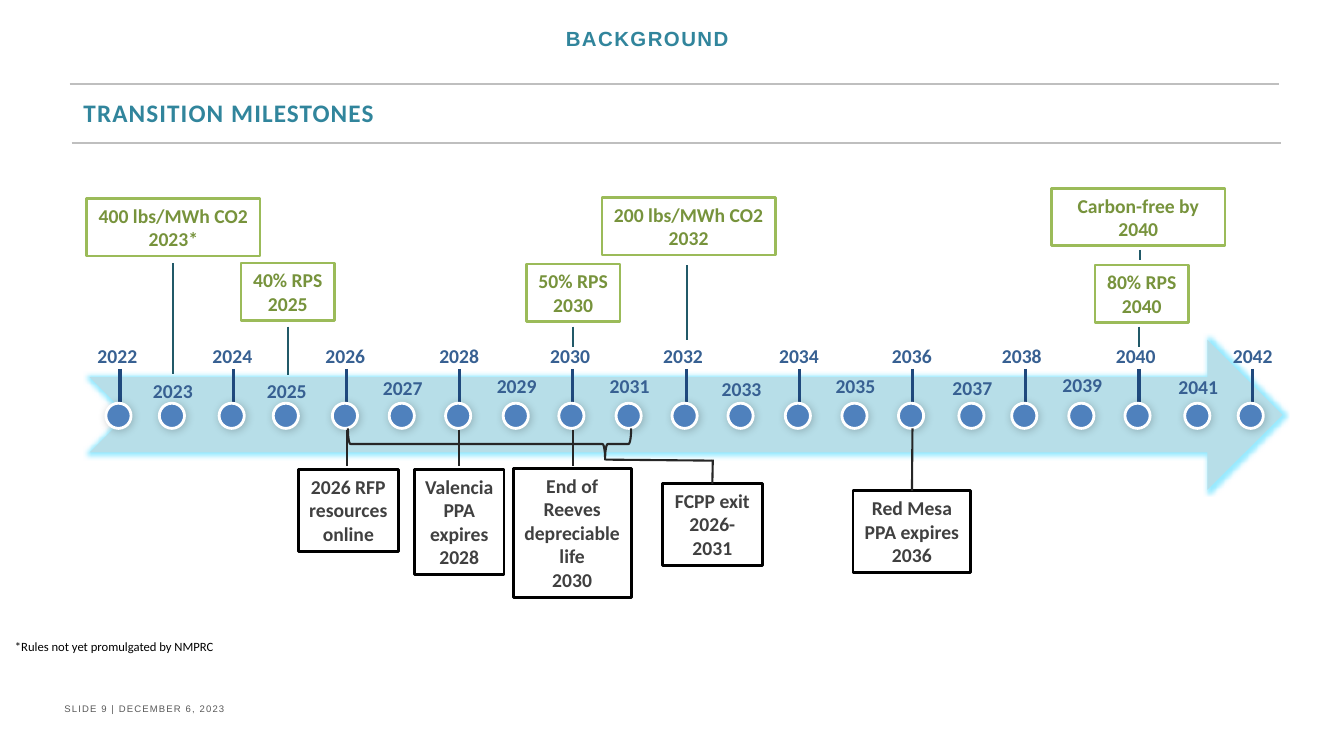
from lxml import etree
from pptx import Presentation
from pptx.dml.color import RGBColor
from pptx.enum.shapes import MSO_CONNECTOR, MSO_SHAPE
from pptx.enum.text import MSO_ANCHOR, MSO_AUTO_SIZE, PP_ALIGN
from pptx.oxml.ns import qn
from pptx.util import Inches, Pt

STRAIGHT = MSO_CONNECTOR.STRAIGHT
RECT, OVAL = MSO_SHAPE.RECTANGLE, MSO_SHAPE.OVAL
ARROW, BRACE = MSO_SHAPE.NOTCHED_RIGHT_ARROW, MSO_SHAPE.RIGHT_BRACE
TOP, MIDDLE = MSO_ANCHOR.TOP, MSO_ANCHOR.MIDDLE
LEFT, CENTER = PP_ALIGN.LEFT, PP_ALIGN.CENTER
GROW, FIXED = MSO_AUTO_SIZE.SHAPE_TO_FIT_TEXT, MSO_AUTO_SIZE.NONE
TOP_SIDE = 0

# Content: headings as (text, box, format, letter spacing, anchor, alignment)
TEAL = "31859C"
HEADINGS = [
    ("BACKGROUND", (2.7, 0.15, 7.44, 0.47),
     dict(size=14.6, name="Arial", color=TEAL, bold=True), 1, MIDDLE, CENTER),
    ("TRANSITION MILESTONES", (0.73, 0.83, 12.14, 0.58),
     dict(size=18, name="Calibri", color=TEAL, bold=True), 0.8, MIDDLE, LEFT),
    ("*Rules not yet promulgated by NMPRC", (0.05, 6.29, 4.26, 0.25),
     dict(size=9, name="Calibri", color="000000", bold=False), 0, TOP, LEFT),
    ("SLIDE 9 | DECEMBER 6, 2023", (0.54, 6.92, 3.57, 0.21),
     dict(size=6.8, name="Arial", color="595959", bold=False), 0.8, TOP, LEFT),
]
RULES = [(0.69, 0.83), (0.71, 1.42)]
RULE_WIDTH = 12

# Even years: label left; odd years: dot left and label top
EVEN_YEARS = {2022: 0.73, 2024: 1.87, 2026: 2.99, 2028: 4.12, 2030: 5.22, 2032: 6.34,
              2034: 7.49, 2036: 8.61, 2038: 9.7, 2040: 10.83, 2042: 11.99}
ODD_YEARS = {2023: (1.58, 3.74), 2025: (2.71, 3.74), 2027: (3.86, 3.72),
             2029: (4.99, 3.7), 2031: (6.11, 3.7), 2033: (7.22, 3.73),
             2035: (8.35, 3.7), 2037: (9.51, 3.72), 2039: (10.6, 3.69),
             2041: (11.75, 3.71)}
FIRST_YEAR, FIRST_TICK, YEAR_STEP = 2022, 1.19, 0.5615
DOT, DOT_TOP = 0.25, 4

TARGETS = [
    (["400 lbs/MWh CO2 2023*"], (0.86, 1.97, 1.72, 0.57)),
    (["Carbon-free by 2040"], (10.43, 1.87, 1.72, 0.57)),
    (["40% RPS 2025"], (2.39, 2.61, 0.93, 0.57)),
    (["50% RPS 2030"], (5.22, 2.62, 0.93, 0.57)),
    (["80% RPS 2040"], (10.86, 2.63, 0.93, 0.57)),
    (["200 lbs/MWh CO2 2032"], (5.97, 1.96, 1.72, 0.57)),
]
TARGET_LINES = [(1.72, 2.61, 3.71), (2.86, 3.24, 3.72), (6.81, 2.63, 3.37),
                (5.68, 3.24, 3.44), (11.3, 3.24, 3.44), (11.31, 2.48, 2.58)]
EVENTS = {
    "fcpp": (["FCPP exit 2026-2031"], (6.57, 4.8, 0.99, 0.81)),
    "reeves": (["End of Reeves depreciable life", "2030"], (5.09, 4.65, 1.17, 1.28)),
    "valencia": (["Valencia PPA expires 2028"], (4.11, 4.66, 0.89, 1.04)),
    "rfp": (["2026 RFP resources", "online"], (2.96, 4.66, 0.99, 0.81)),
    "red mesa": (["Red Mesa PPA expires 2036"], (8.46, 4.87, 1.17, 0.81)),
}
EVENT_LINES = [(3.44, 4.27, 3.44, 4.62), (4.55, 4.27, 4.55, 4.62),
               (5.68, 4.27, 5.68, 4.62), (6.01, 4.56, 7.06, 4.57)]
JOINED_LINES = [("fcpp", 7.07, 4.56), ("red mesa", 9.05, 4.25)]

prs = Presentation()
prs.slide_width, prs.slide_height = Inches(13.33), Inches(7.5)
shapes = prs.slides.add_slide(prs.slide_layouts[6]).shapes


def rgb(value):
    return RGBColor.from_string(value)


def inches(values):
    return [Inches(v) for v in values]


def add_effect(shape, kind, color, alpha, **attributes):
    effects = etree.SubElement(shape._element.spPr, qn("a:effectLst"))
    effect = etree.SubElement(effects, qn("a:" + kind))
    for key, value in attributes.items():
        effect.set(key, str(value))
    tint = etree.SubElement(effect, qn("a:srgbClr"), val=color)
    etree.SubElement(tint, qn("a:alpha"), val=str(alpha * 1000))


def write(shape, lines, fmt, spacing=0, anchor=TOP, align=CENTER, grow=False,
          margin=None, line_spacing=None):
    frame = shape.text_frame
    settings = dict(word_wrap=True, vertical_anchor=anchor,
                    auto_size=GROW if grow else FIXED)
    if margin is not None:
        for side in ("left", "top", "right", "bottom"):
            settings["margin_" + side] = Inches(margin)
    for key, value in settings.items():
        setattr(frame, key, value)
    for i, line in enumerate(lines):
        paragraph = frame.add_paragraph() if i else frame.paragraphs[0]
        paragraph.alignment = align
        if line_spacing:
            paragraph.line_spacing = line_spacing
        run = paragraph.add_run()
        run.text = line
        for key in ("name", "bold"):
            setattr(run.font, key, fmt[key])
        run.font.size = Pt(fmt["size"])
        run.font.color.rgb = rgb(fmt["color"])
        if spacing:
            run._r.get_or_add_rPr().set("spc", str(round(spacing * 100)))


def add_shape(kind, box, fill=None, line=None, weight=2, shadow=False):
    shape = shapes.add_shape(kind, *inches(box))
    if not shadow:
        shape.shadow.inherit = False
    if fill:
        shape.fill.solid()
        shape.fill.fore_color.rgb = rgb(fill)
    else:
        shape.fill.background()
    if line:
        shape.line.color.rgb = rgb(line)
        shape.line.width = Pt(weight)
    else:
        shape.line.fill.background()
    return shape


def add_line(x1, y1, x2, y2, color, weight=1.5):
    line = shapes.add_connector(STRAIGHT, *inches((x1, y1, x2, y2)))
    line.line.color.rgb = rgb(color)
    line.line.width = Pt(weight)
    etree.SubElement(line._element.spPr, qn("a:effectLst"))
    return line


def add_callout(lines, box, border, color):
    callout = add_shape(RECT, box, "FFFFFF", border)
    write(callout, lines, dict(size=14, name="Calibri", color=color, bold=True), grow=True)
    return callout


# Rules and headings
for x, y in RULES:
    add_line(x, y, x + RULE_WIDTH, y, "BFBFBF")
for text, box, fmt, spacing, anchor, align in HEADINGS:
    write(shapes.add_textbox(*inches(box)), [text], fmt, spacing, anchor, align,
          grow=anchor == TOP)

# Timeline arrow with a soft glow
timeline = add_shape(ARROW, (0.89, 3.37, 11.83, 1.49), "B7DEE8", shadow=True)
add_effect(timeline, "glow", "00CCFF", 40, rad=Pt(5))

# Years: labels, ticks and dots
year_format = dict(size=14, name="Calibri", color="376092", bold=True)
for year in range(FIRST_YEAR, 2043):
    if year in EVEN_YEARS:
        tick = FIRST_TICK + (year - FIRST_YEAR) * YEAR_STEP
        add_line(tick, 3.66, tick, 4.06, "1F497D", 2.25)
        label_left, label_top, dot_left = EVEN_YEARS[year], 3.4, tick - 0.14
    else:
        dot_left, label_top = ODD_YEARS[year]
        label_left = dot_left - 0.3
    label = shapes.add_textbox(*inches((label_left, label_top, 0.87, 0.29)))
    write(label, [str(year)], year_format, anchor=MIDDLE, margin=0.11, line_spacing=0.9)
    dot = add_shape(OVAL, (dot_left, DOT_TOP, DOT, DOT), "4F81BD", "FFFFFF", shadow=True)
    add_effect(dot, "outerShdw", "000000", 20, blurRad=Pt(6), dist=Pt(1), dir=45 * 60000)

# Targets above the arrow
for lines, box in TARGETS:
    add_callout(lines, box, "9BBB59", "77933C")
for x, top, bottom in TARGET_LINES:
    add_line(x, top, x, bottom, "215968")

# Events below the arrow
events = {key: add_callout(lines, box, "000000", "404040")
          for key, (lines, box) in EVENTS.items()}
for ends in EVENT_LINES:
    add_line(*ends, "262626")
for key, x, y in JOINED_LINES:
    add_line(x, y, x, EVENTS[key][1][1], "262626").end_connect(events[key], TOP_SIDE)

# Brace over the exit period
exit_period = add_shape(BRACE, (4.7, 3, 0.31, 2.81), line="262626", weight=1.5)
exit_period.rotation = 90
exit_period.adjustments[0], exit_period.adjustments[1] = 0.083, 0.092

prs.save("out.pptx")
